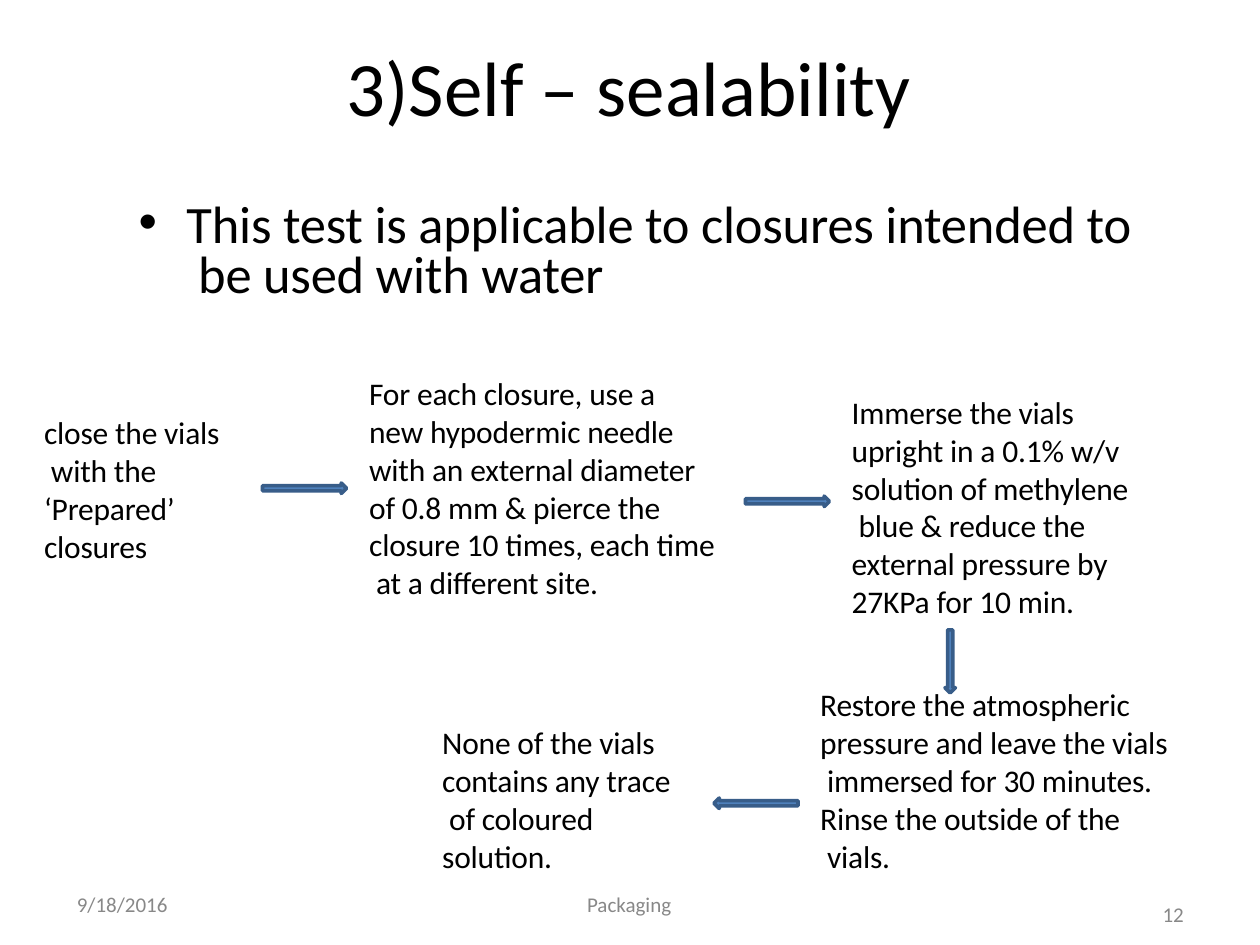
from pptx import Presentation
from pptx.dml.color import RGBColor
from pptx.enum.shapes import MSO_SHAPE as Shape
from pptx.enum.text import MSO_ANCHOR as Anchor, MSO_AUTO_SIZE as AutoSize, PP_ALIGN as Align
from pptx.util import Inches, Pt

CELL = Inches(1) / 12
COLUMNS, ROWS = 120, 90
ARROW_WIDTH = 1

TITLE = "3)Self – sealability"
BODY = "This test is applicable to closures intended to\v be used with water"
STEPS = [
    ((4.08, 39.24, 17.28, 14.76), "close the vials\v with the\n‘Prepared’\nclosures"),
    ((35.04, 35.52, 33.72, 21.96),
     "For each closure, use a\vnew hypodermic needle\vwith an external diameter\v"
     "of 0.8 mm & pierce the\vclosure 10 times, each time\v at a different site."),
    ((81, 37.32, 27.12, 21.96),
     "Immerse the vials\vupright in a 0.1% w/v\vsolution of methylene\v"
     " blue & reduce the\vexternal pressure by\v27KPa for 10 min."),
    ((78, 65.16, 33.96, 18.36),
     "Restore the atmospheric\vpressure and leave the vials\v immersed for 30 minutes.\n"
     "Rinse the outside of the\v vials."),
    ((42, 68.76, 22.44, 14.76),
     "None of the vials\vcontains any trace\v of coloured\vsolution."),
]
ARROWS = [
    (Shape.RIGHT_ARROW, 25, 46, 8, ARROW_WIDTH),
    (Shape.RIGHT_ARROW, 71, 47.25, 8, ARROW_WIDTH),
    (Shape.DOWN_ARROW, 90, 60, ARROW_WIDTH, 6),
    (Shape.LEFT_ARROW, 68, 76, 8, ARROW_WIDTH),
]
FOOTERS = [
    ((7.2, 85.2, 9, 2.28), "9/18/2016", 0),
    ((55.8, 85.2, 8.4, 2.28), "Packaging", 0),
    ((110.6, 86.2, 3, 2.28), "12", 0),
]


def color(code):
    """Turn a hex string into a colour."""
    return RGBColor.from_string(code)


def cells(*lengths):
    """Turn grid cells into slide lengths."""
    return [round(length * CELL) for length in lengths]


def write(box, text, size, code="000000", top=0.01, before=1, line=None, tracking=-10):
    """Fill a text frame and format its paragraphs and runs."""
    frame = box.text_frame
    frame.text = text
    frame.word_wrap = True
    frame.auto_size = AutoSize.NONE
    frame.vertical_anchor = Anchor.TOP
    frame.margin_left, frame.margin_top = Inches(0.01), Inches(top)
    frame.margin_right = frame.margin_bottom = 0
    for number, para in enumerate(frame.paragraphs):
        para.alignment = Align.LEFT
        para.space_before = Pt(0 if number else before)
        para.line_spacing = line
        for span in para.runs:
            span.font.name = "Calibri"
            span.font.size = Pt(size)
            span.font.color.rgb = color(code)
            span.font._element.set("spc", str(tracking))


def place(box, *area):
    """Move a placeholder to an area of the grid."""
    box.left, box.top, box.width, box.height = cells(*area)


def add_text(page, area, text, size, **style):
    """Add a text box on the grid."""
    write(page.shapes.add_textbox(*cells(*area)), text, size, **style)


def add_arrow(page, kind, *area):
    """Add a block arrow on the grid."""
    arrow = page.shapes.add_shape(kind, *cells(*area))
    arrow.shadow.inherit = False
    arrow.fill.solid()
    arrow.fill.fore_color.rgb = color("4F81BC")
    arrow.line.color.rgb = color("385D89")
    arrow.line.width = Pt(2.04)


def add_heading(page):
    """Fill the title and body placeholders."""
    title, body = page.placeholders
    place(title, 32.88, 3.6, 54.6, 9.12)
    write(title, TITLE, 44, tracking=0)
    place(body, 13.08, 18, 95.64, 11.16)
    write(body, BODY, 30, top=0.11, before=8.2, line=0.8)
    bullet = body.text_frame.paragraphs[0]._p.get_or_add_pPr()
    bullet.set("marL", str(Inches(0.38)))
    bullet.set("indent", str(-Inches(0.38)))


def main():
    """Build and save the slide."""
    deck = Presentation()
    deck.slide_width, deck.slide_height = cells(COLUMNS, ROWS)
    page = deck.slides.add_slide(deck.slide_layouts[1])
    add_heading(page)
    for area, text in STEPS:
        add_text(page, area, text, 18)
    for arrow in ARROWS:
        add_arrow(page, *arrow)
    for area, text, before in FOOTERS:
        add_text(page, area, text, 12, code="888888", top=0, before=before,
                 line=Pt(12.4), tracking=0)
    deck.save("out.pptx")


if __name__ == "__main__":
    main()
